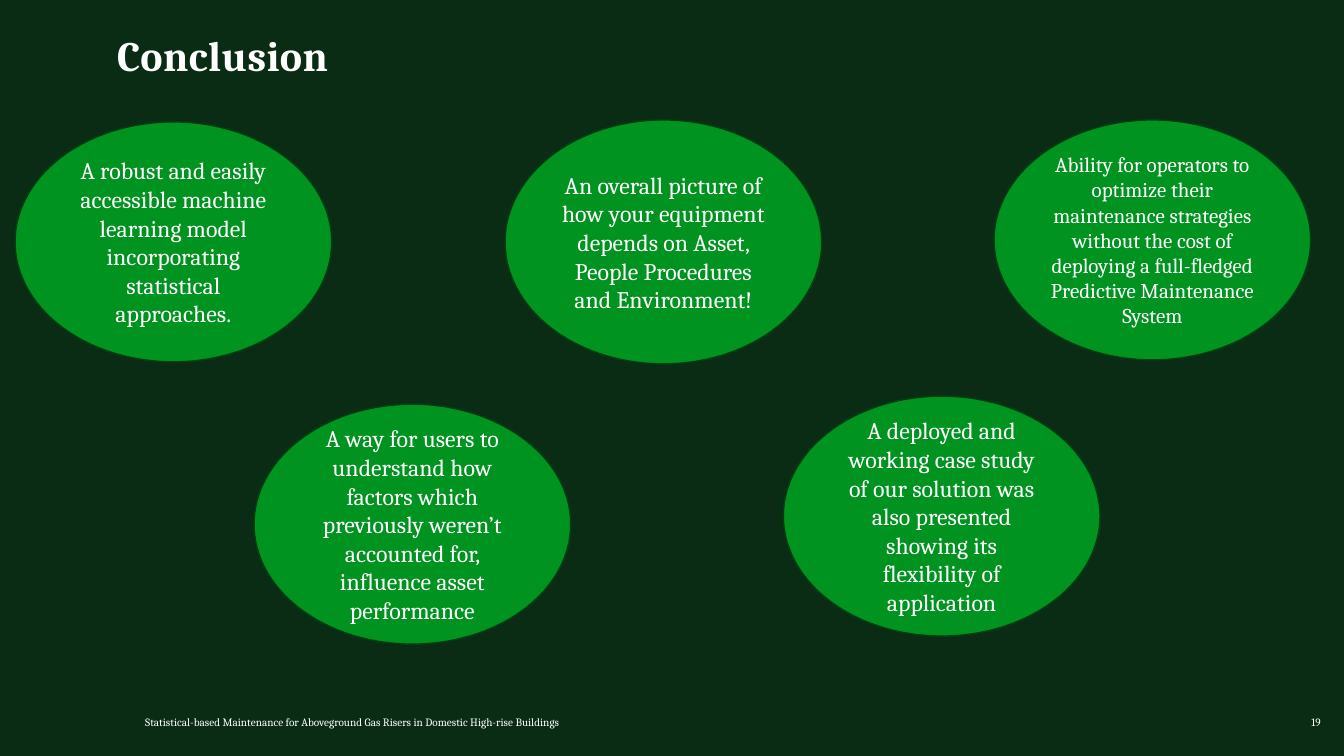
from pptx import Presentation
from pptx.dml.color import RGBColor
from pptx.enum import shapes, text
from pptx.util import Inches, Pt

BACKGROUND = RGBColor(0x0A, 0x2C, 0x14)
GREEN = RGBColor(0x00, 0x93, 0x20)
OUTLINE = RGBColor(0x00, 0x40, 0x0E)
WHITE = RGBColor(0xFF, 0xFF, 0xFF)
FONT = "Cambria"
OVAL_WIDTH = 3.14
OVAL_HEIGHT = 2.38

# Left, top, height, text size, wording
CONCLUSIONS = [
    (0.15, 1.21, OVAL_HEIGHT, 17,
     "A robust and easily accessible machine learning model "
     "incorporating statistical approaches."),
    (5.01, 1.19, 2.42, 17,
     "An overall picture of how your equipment depends on Asset, "
     "People Procedures and Environment!"),
    (9.86, 1.19, OVAL_HEIGHT, 15,
     "Ability for operators to optimize their maintenance strategies "
     "without the cost of deploying a full-fledged Predictive "
     "Maintenance System"),
    (2.52, 4.01, OVAL_HEIGHT, 17,
     "A way for users to understand how factors which previously "
     "weren’t accounted for, influence asset performance"),
    (7.77, 3.93, OVAL_HEIGHT, 17,
     "A deployed and working case study of our solution was also "
     "presented showing its flexibility of application"),
]


def write(frame, wording, size, align=text.PP_ALIGN.CENTER,
          anchor=text.MSO_ANCHOR.MIDDLE, bold=False, line_spacing=None,
          tracking=None):
    """Fill a text frame with one formatted paragraph."""
    frame.word_wrap = True
    frame.vertical_anchor = anchor
    paragraph = frame.paragraphs[0]
    paragraph.alignment = align
    if line_spacing:
        paragraph.line_spacing = line_spacing
    run = paragraph.add_run()
    run.text = wording
    run.font.name = FONT
    run.font.size = Pt(size)
    run.font.bold = bold
    run.font.color.rgb = WHITE
    if tracking:
        # Letter spacing is stored in hundredths of a point
        run._r.get_or_add_rPr().set("spc", str(round(tracking * 100)))


def add_label(slide, left, top, width, height, wording, size, **style):
    """Add a text box without margins."""
    frame = slide.shapes.add_textbox(
        Inches(left), Inches(top), Inches(width), Inches(height)).text_frame
    frame.margin_left = frame.margin_right = 0
    frame.margin_top = frame.margin_bottom = 0
    write(frame, wording, size, **style)


def add_oval(slide, left, top, height, size, wording):
    """Add a green oval holding one conclusion."""
    oval = slide.shapes.add_shape(
        shapes.MSO_SHAPE.OVAL, Inches(left), Inches(top),
        Inches(OVAL_WIDTH), Inches(height))
    oval.shadow.inherit = False
    oval.fill.solid()
    oval.fill.fore_color.rgb = GREEN
    oval.line.color.rgb = OUTLINE
    oval.line.width = Pt(1)
    write(oval.text_frame, wording, size)


def main():
    deck = Presentation()
    deck.slide_width = Inches(13.33)
    deck.slide_height = Inches(7.5)
    slide = deck.slides.add_slide(deck.slide_layouts[6])
    slide.background.fill.solid()
    slide.background.fill.fore_color.rgb = BACKGROUND

    # Title
    add_label(slide, 0.15, 0.35, 4.12, 0.45, "Conclusion", 30, bold=True,
              anchor=text.MSO_ANCHOR.TOP, line_spacing=0.9, tracking=0.3)

    # Conclusions
    for conclusion in CONCLUSIONS:
        add_oval(slide, *conclusion)

    # Footer and page number
    add_label(slide, 1.44, 7.03, 5.12, 0.2,
              "Statistical-based Maintenance for Aboveground Gas Risers "
              "in Domestic High-rise Buildings", 8,
              align=text.PP_ALIGN.LEFT, anchor=text.MSO_ANCHOR.BOTTOM)
    add_label(slide, 12.51, 7.03, 0.59, 0.2, "19", 8,
              align=text.PP_ALIGN.RIGHT, anchor=text.MSO_ANCHOR.BOTTOM)

    deck.save("out.pptx")


if __name__ == "__main__":
    main()
